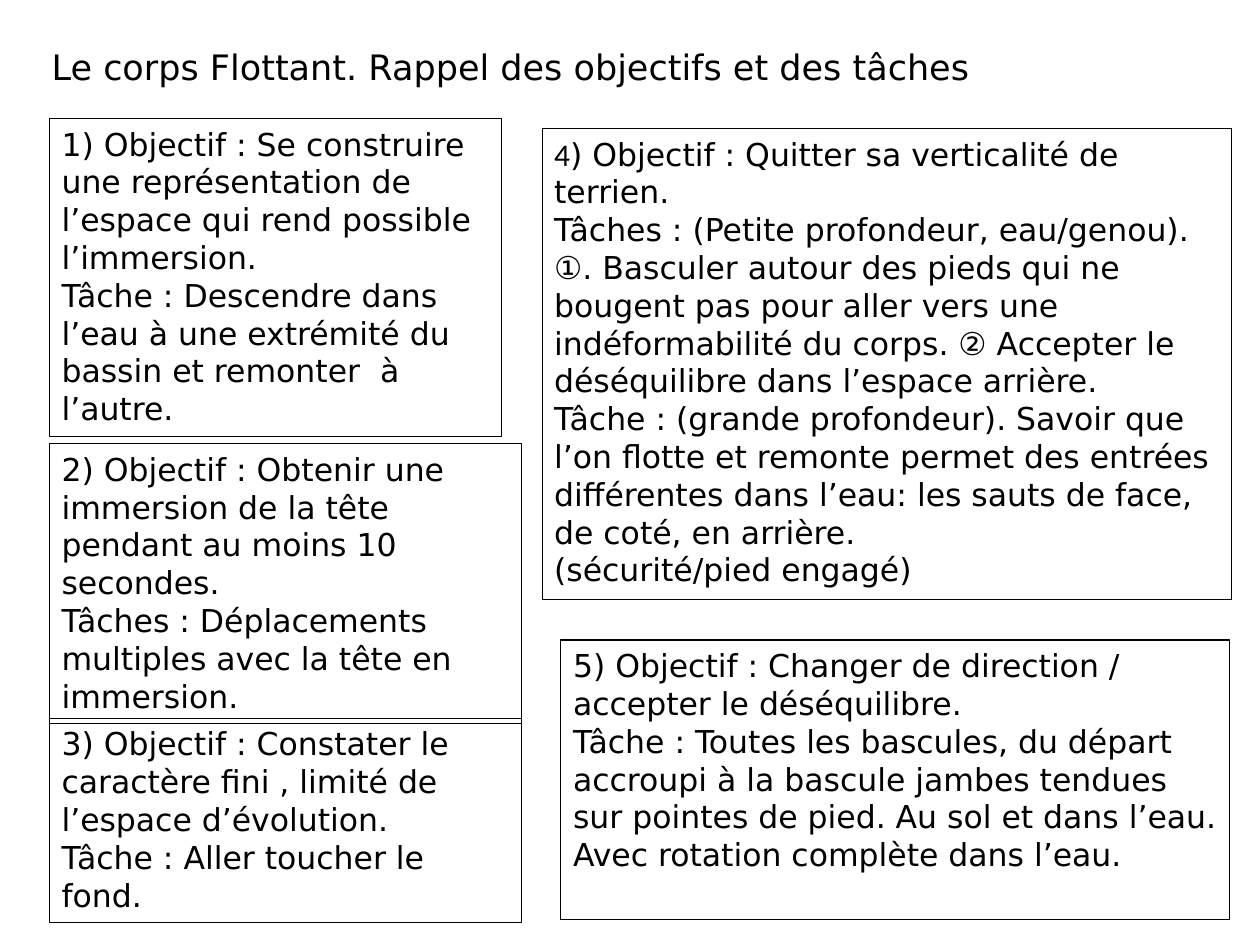
"""Build the slide that recalls the goals and tasks of the floating body."""
from dataclasses import dataclass

from pptx import Presentation
from pptx.dml.color import RGBColor
from pptx.enum.shapes import MSO_SHAPE
from pptx.enum.text import MSO_ANCHOR, MSO_AUTO_SIZE, PP_ALIGN
from pptx.util import Inches, Pt


@dataclass(frozen=True)
class Theme:
    font: str = "DejaVu Sans"
    digit_font: str = "Calibri"
    ink: RGBColor = RGBColor(0, 0, 0)
    title_size: int = 20
    body_size: int = 18
    thin: float = 0.25
    medium: float = 0.75


THEME = Theme()
TITLE = "Le corps Flottant. Rappel des objectifs et des tâches"
TITLE_AREA = (0.31, 0.31, 7.58, 0.44)
GOALS = [
    ((0.39, 0.94, 3.59, 2.52), THEME.thin, [
        ["1) Objectif : Se construire une représentation de l’espace qui rend possible l’immersion."],
        ["Tâche : Descendre dans l’eau à une extrémité du bassin et remonter  à l’autre."],
    ]),
    ((0.39, 3.52, 3.75, 2.22), THEME.medium, [
        ["2) Objectif : Obtenir une immersion de la tête pendant au moins 10 secondes."],
        ["Tâches : Déplacements multiples avec la tête en immersion."],
    ]),
    ((0.39, 5.7, 3.75, 1.62), THEME.thin, [
        ["3) Objectif : Constater le caractère fini , limité de l’espace d’évolution."],
        ["Tâche : Aller toucher le fond."],
    ]),
    ((4.3, 1.02, 5.47, 3.74), THEME.thin, [
        ["4", ") Objectif : Quitter sa verticalité de terrien."],
        ["Tâches : (Petite profondeur, eau/genou). ①. Basculer autour des pieds qui ne bougent pas "
         "pour aller vers une indéformabilité du corps. ② Accepter le déséquilibre dans l’espace arrière."],
        ["Tâche : (grande profondeur). Savoir que l’on flotte et remonte permet des entrées "
         "différentes dans l’eau: les sauts de face, de coté, en arrière."],
        ["(sécurité/pied engagé)"],
    ]),
    ((4.45, 5.08, 5.31, 2.22), THEME.medium, [
        ["5) Objectif : Changer de direction / accepter le déséquilibre."],
        ["Tâche : Toutes les bascules, du départ accroupi à la bascule jambes tendues sur pointes "
         "de pied. Au sol et dans l’eau. Avec rotation complète dans l’eau."],
    ]),
]


def write(frame, paragraphs, size):
    frame.word_wrap = True
    frame.auto_size = MSO_AUTO_SIZE.SHAPE_TO_FIT_TEXT
    frame.vertical_anchor = MSO_ANCHOR.TOP
    for index, pieces in enumerate(paragraphs):
        paragraph = frame.add_paragraph() if index else frame.paragraphs[0]
        paragraph.alignment = PP_ALIGN.LEFT
        for piece in pieces:
            run = paragraph.add_run()
            run.text = piece
            run.font.name = THEME.digit_font if piece.isdigit() else THEME.font
            run.font.size = Pt(size)
            run.font.color.rgb = THEME.ink


def add_goal(slide, area, border, paragraphs):
    goal = slide.shapes.add_shape(MSO_SHAPE.RECTANGLE, *map(Inches, area))
    goal.shadow.inherit = False
    goal.fill.background()
    goal.line.color.rgb = THEME.ink
    goal.line.width = Pt(border)
    write(goal.text_frame, paragraphs, THEME.body_size)


def main():
    deck = Presentation()
    deck.slide_width, deck.slide_height = Inches(10), Inches(7.5)
    slide = deck.slides.add_slide(deck.slide_layouts[5])
    title = slide.shapes.title
    title.left, title.top, title.width, title.height = map(Inches, TITLE_AREA)
    write(title.text_frame, [[TITLE]], THEME.title_size)
    for area, border, paragraphs in GOALS:
        add_goal(slide, area, border, paragraphs)
    deck.save("out.pptx")


if __name__ == "__main__":
    main()
